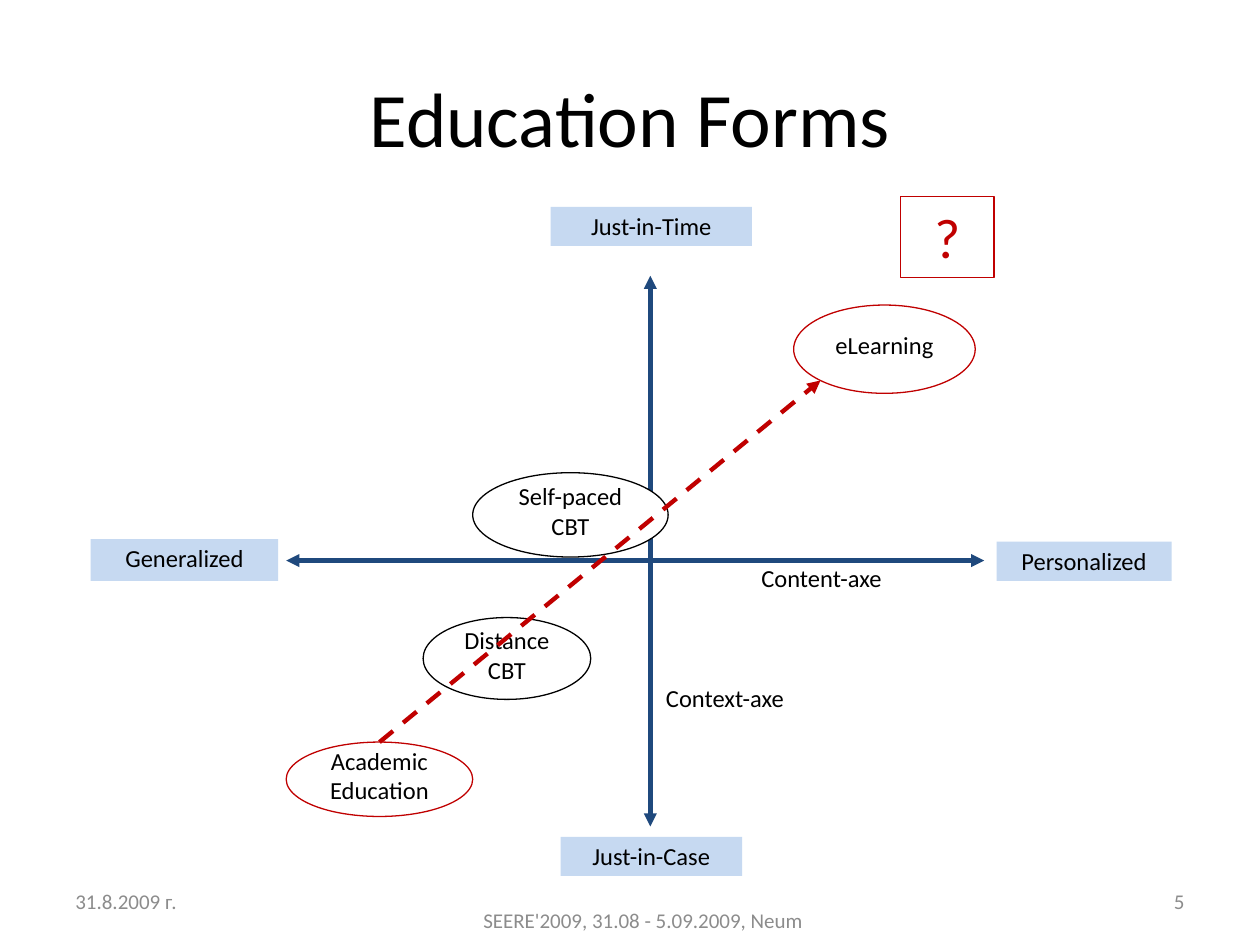
from lxml import etree
from pptx import Presentation
from pptx.dml.color import RGBColor
from pptx.enum.dml import MSO_LINE
from pptx.enum.shapes import MSO_CONNECTOR, MSO_SHAPE
from pptx.enum.text import MSO_ANCHOR, PP_ALIGN
from pptx.oxml.ns import qn
from pptx.util import Cm, Pt

RECTANGLE, ELLIPSE = MSO_SHAPE.RECTANGLE, MSO_SHAPE.OVAL
STRAIGHT, DASH = MSO_CONNECTOR.STRAIGHT, MSO_LINE.DASH
TOP, MIDDLE = MSO_ANCHOR.TOP, MSO_ANCHOR.MIDDLE
LEFT, CENTER, RIGHT = PP_ALIGN.LEFT, PP_ALIGN.CENTER, PP_ALIGN.RIGHT
color = RGBColor.from_string
BLACK, WHITE, GREY = "000000", "FFFFFF", "8C8C8C"
RED, NAVY, PALE_BLUE = "C00000", "1F497D", "C6D9F1"

presentation = Presentation()
presentation.slide_width, presentation.slide_height = Cm(25.4), Cm(19.05)
slide = presentation.slides.add_slide(presentation.slide_layouts[6])


def add_text(text, box, preset=None, fill=None, line=None, size=14, font_color=BLACK,
             align=CENTER, anchor=TOP, insets=(0.15, 0.08, 0.15, 0.08)):
    """Add a text box, or a preset shape with text; box and insets are in cm."""
    lengths = [Cm(value) for value in box]
    if preset is None:
        shape = slide.shapes.add_textbox(*lengths)
    else:
        shape = slide.shapes.add_shape(preset, *lengths)
        shape.shadow.inherit = False
        if fill:
            shape.fill.solid()
            shape.fill.fore_color.rgb = color(fill)
        else:
            shape.fill.background()
        if line:
            shape.line.color.rgb = color(line)
            shape.line.width = Pt(0.75)
        else:
            shape.line.fill.background()
    frame = shape.text_frame
    frame.word_wrap = True
    frame.vertical_anchor = anchor
    (frame.margin_left, frame.margin_top,
     frame.margin_right, frame.margin_bottom) = [Cm(value) for value in insets]
    paragraph = frame.paragraphs[0]
    paragraph.alignment = align
    run = paragraph.add_run()
    run.text = text
    run.font.name = "Calibri"
    run.font.size = Pt(size)
    run.font.color.rgb = color(font_color)


def add_arrow(start, end, line_color, arrowheads, dash=None):
    """Draw an arrow between two points in cm; arrowheads lists headEnd and tailEnd."""
    arrow = slide.shapes.add_connector(STRAIGHT, *[Cm(value) for value in start + end])
    arrow.line.color.rgb = color(line_color)
    arrow.line.width = Pt(2.5)
    if dash:
        arrow.line.dash_style = dash
    for arrowhead in arrowheads:
        etree.SubElement(arrow.line._ln, qn(f"a:{arrowhead}"), type="triangle")
    etree.SubElement(arrow._element.spPr, qn("a:effectLst"))


add_text("Education Forms", (1.27, 0.76, 22.86, 3.18), size=44, anchor=MIDDLE)

footers = [
    ("31.8.2009 г.", (1.27, 17.65, 5.92, 1.02), LEFT),
    ("SEERE'2009, 31.08 - 5.09.2009, Neum", (8.94, 18.03, 8.05, 1.02), CENTER),
    ("5", (18.21, 17.65, 5.92, 1.02), RIGHT),
]
for text, box, align in footers:
    add_text(text, box, size=12, font_color=GREY, align=align, anchor=MIDDLE,
             insets=(0.25, 0.13, 0.25, 0.13))

# Axes with their names and end labels
add_arrow((5.77, 11.3), (19.84, 11.3), NAVY, ["headEnd", "tailEnd"])
add_arrow((13.11, 5.56), (13.11, 16.66), NAVY, ["headEnd", "tailEnd"])
add_text("Content-axe", (14.68, 11.28, 3.76, 0.84))
add_text("Context-axe", (12.9, 13.69, 3.43, 1.07))

end_labels = [
    ("Generalized", (1.83, 10.87, 3.78, 0.84)),
    ("Personalized", (20.09, 10.92, 3.53, 0.79)),
    ("Just-in-Time", (11.1, 4.17, 4.06, 0.79)),
    ("Just-in-Case", (11.3, 16.87, 3.66, 0.79)),
]
for text, box in end_labels:
    add_text(text, box, RECTANGLE, fill=PALE_BLUE)

# Education forms along the trend
forms = [
    ("Academic Education", (5.77, 14.96, 3.76, 1.5), RED),
    ("Distance CBT", (8.53, 12.45, 3.38, 1.65), BLACK),
    ("Self-paced CBT", (9.53, 9.53, 3.94, 1.7), BLACK),
    ("eLearning", (16, 6.15, 3.66, 1.78), RED),
]
for text, box, line in forms:
    add_text(text, box, ELLIPSE, fill=WHITE, line=line, anchor=MIDDLE,
             insets=(0.1, 0, 0.1, 0.16))

add_arrow((7.65, 14.96), (16.54, 7.67), RED, ["tailEnd"], DASH)
add_text("?", (18.16, 3.96, 1.88, 1.63), RECTANGLE, line=RED, size=32, font_color=RED,
         insets=(0.25, 0.13, 0.25, 0.13))

presentation.save("out.pptx")
